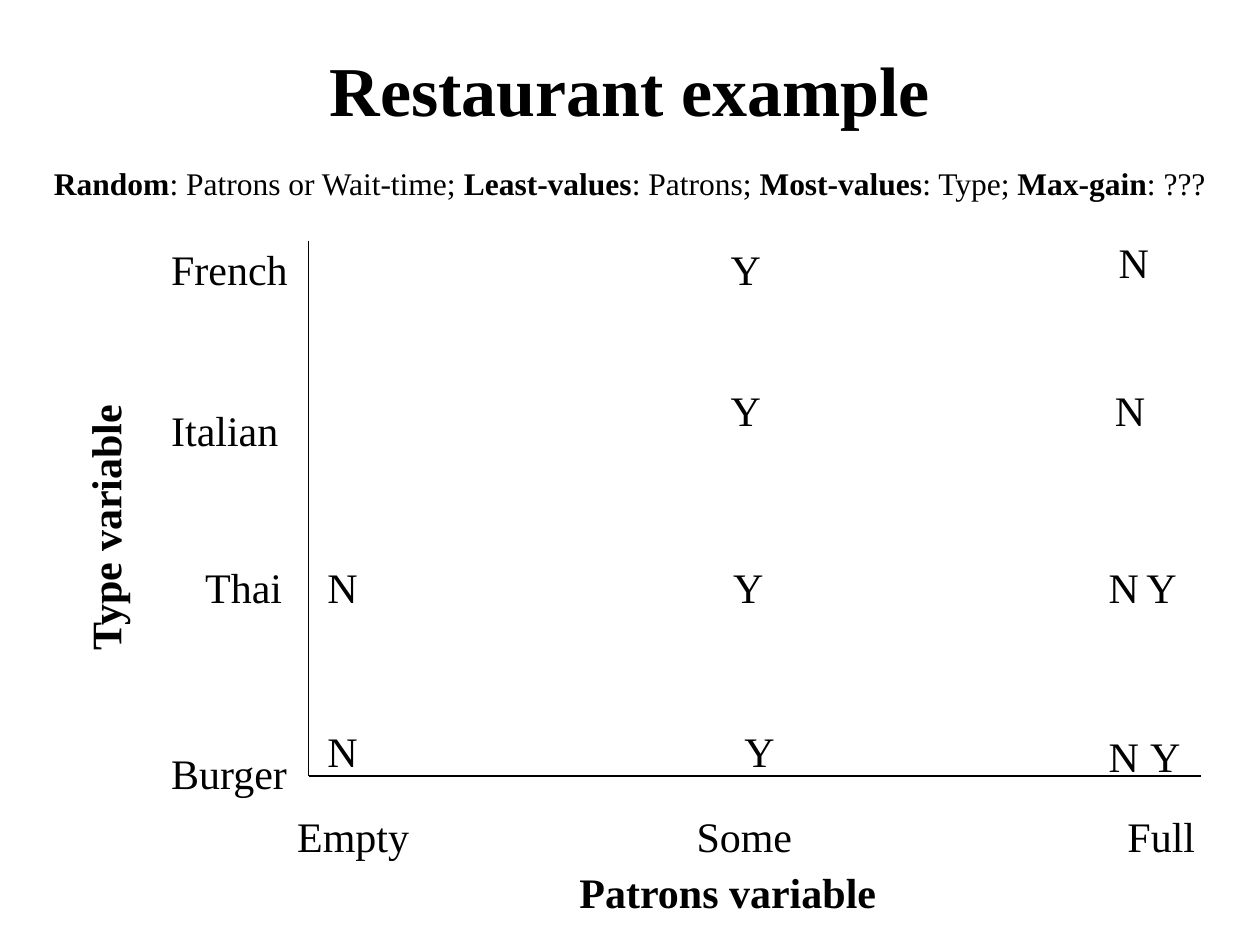
from pptx import Presentation
from pptx.dml.color import RGBColor
from pptx.enum import shapes, text
from pptx.oxml import ns, xmlchemy
from pptx.util import Inches, Pt

BLACK = RGBColor(0, 0, 0)
WHITE = RGBColor(255, 255, 255)
FONT = "Times New Roman"

TYPES = [("French", 0, 0.05, 1.13), ("Italian", 0, 1.33, 1.05),
         ("Thai", 0.27, 2.58, 0.81), ("Burger", 0, 4.05, 1.13)]
PATRONS = [("Empty", 1, 1.09), ("Some", 4.17, 0.96), ("Full", 7.59, 0.74)]
OUTCOMES = {
    "Y": [(4.44, 0.05), (4.44, 1.17), (4.46, 2.58), (4.55, 3.88),
          (7.74, 2.58), (7.77, 3.92)],
    "N": [(7.52, 0), (7.49, 1.17), (7.44, 2.58), (7.44, 3.92),
          (1.24, 2.58), (1.24, 3.88)],
}
STRATEGIES = [("Random", ": Patrons or Wait-time; "), ("Least-values", ": Patrons; "),
              ("Most-values", ": Type; "), ("Max-gain", ": ???")]


def add_label(slide, left, top, width, height, words="", size=24, bold=None):
    label = slide.shapes.add_textbox(Inches(left), Inches(top), Inches(width), Inches(height))
    frame = label.text_frame
    frame.word_wrap = False
    frame.auto_size = text.MSO_AUTO_SIZE.SHAPE_TO_FIT_TEXT
    paragraph = frame.paragraphs[0]
    paragraph.text = words
    paragraph.font.name = FONT
    paragraph.font.size = Pt(size)
    paragraph.font.bold = bold
    paragraph.font.color.rgb = BLACK
    return frame


def add_axis(slide, x1, y1, x2, y2):
    axis = slide.shapes.add_connector(
        shapes.MSO_CONNECTOR.STRAIGHT, Inches(x1), Inches(y1), Inches(x2), Inches(y2))
    axis.line.color.rgb = BLACK
    axis.line.width = Pt(0.75)
    axis._element.spPr.append(xmlchemy.OxmlElement("a:effectLst"))


def add_title(slide, left, top, width, height):
    frame = add_label(slide, left, top, width, height, "Restaurant example", 40, True)
    frame.auto_size = text.MSO_AUTO_SIZE.NONE
    frame.word_wrap = True
    frame.vertical_anchor = text.MSO_ANCHOR.MIDDLE
    frame.paragraphs[0].alignment = text.PP_ALIGN.CENTER


def add_strategies(slide, left, top, width, height):
    paragraph = add_label(slide, left, top, width, height, size=18).paragraphs[0]
    for strategy, choice in STRATEGIES:
        for words, bold in ((strategy, True), (choice, False)):
            run = paragraph.add_run()
            run.text = words
            run.font.bold = bold


def add_plot(slide, left, top, width, height):
    axis_x, axis_y = left + 1.19, top + 4.33
    add_axis(slide, axis_x, top + 0.08, axis_x, axis_y)
    add_axis(slide, axis_x, axis_y, left + width, axis_y)
    for name, dx, dy, label_width in TYPES:
        add_label(slide, left + dx, top + dy, label_width, 0.5, name)
    for name, dx, label_width in PATRONS:
        add_label(slide, left + dx, top + height - 0.5, label_width, 0.5, name)
    for outcome, places in OUTCOMES.items():
        for dx, dy in places:
            add_label(slide, left + dx, top + dy, 0.44, 0.5, outcome)


def add_axis_titles(slide, left, top, width, height):
    add_label(slide, left + 3.92, top + height - 0.51, 2.58, 0.51, "Patrons variable", bold=True)
    vertical = add_label(slide, left, top + 1.36, 0.61, 2.07, "Type variable", bold=True)
    vertical._txBody.find(ns.qn("a:bodyPr")).set("vert", "vert270")


def main():
    deck = Presentation()
    deck.slide_width, deck.slide_height = Inches(10), Inches(7.5)
    slide = deck.slides.add_slide(deck.slide_layouts[6])
    slide.background.fill.solid()
    slide.background.fill.fore_color.rgb = WHITE
    add_title(slide, 0.75, 0.08, 8.5, 1.25)
    add_plot(slide, 1.26, 1.83, 8.27, 5.05)
    add_strategies(slide, 0.33, 1.25, 9.39, 0.4)
    add_axis_titles(slide, 0.58, 1.83, 8.95, 5.51)
    deck.save("out.pptx")


if __name__ == "__main__":
    main()
